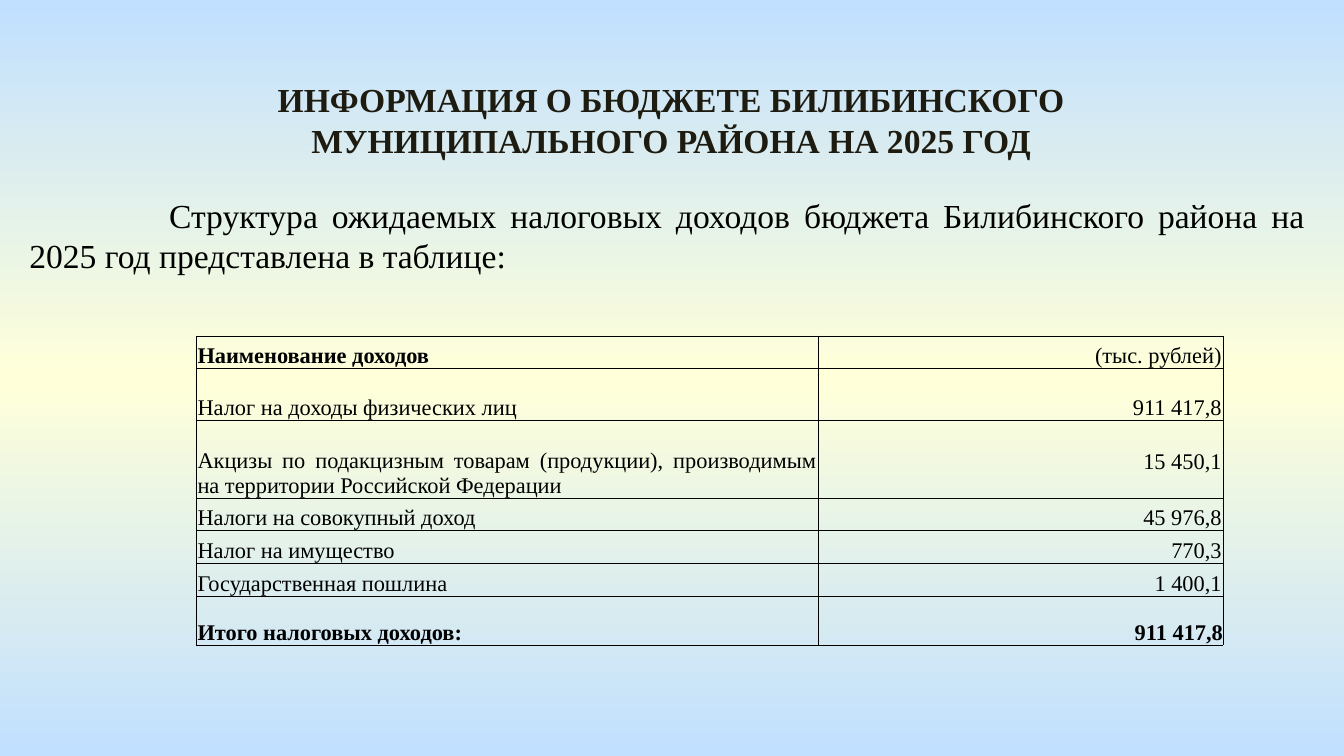
import copy

import pptx
import pptx.dml.color
import pptx.enum.text
import pptx.oxml
import pptx.oxml.ns
import pptx.util

Inches = pptx.util.Inches
ALIGN = pptx.enum.text.PP_ALIGN
ANCHOR = pptx.enum.text.MSO_ANCHOR

TITLE = "ИНФОРМАЦИЯ О БЮДЖЕТЕ БИЛИБИНСКОГО МУНИЦИПАЛЬНОГО РАЙОНА НА 2025 ГОД"
INTRODUCTION = (
    "Структура ожидаемых налоговых доходов бюджета Билибинского района "
    "на 2025 год представлена в таблице:"
)
INCOME_ROWS = [
    ("Наименование доходов", "(тыс. рублей)", 0.24),
    ("Налог на доходы физических лиц", "911 417,8", 0.39),
    ("Акцизы по подакцизным товарам (продукции), производимым "
     "на территории Российской Федерации", "15 450,1", 0.58),
    ("Налоги на совокупный доход", "45 976,8", 0.24),
    ("Налог на имущество", "770,3", 0.24),
    ("Государственная пошлина", "1 400,1", 0.25),
    ("Итого налоговых доходов:", "911 417,8", 0.36),
]
COLUMN_WIDTHS = [4.63, 3.01]
EXCISE_ROW = 2
TOTAL_ROW = len(INCOME_ROWS) - 1
BOLD_CELLS = {(0, 0), (TOTAL_ROW, 0), (TOTAL_ROW, 1)}
SLIDE_WIDTH = 10
SLIDE_HEIGHT = SLIDE_WIDTH * 9 / 16

THEME = {
    "font": "Times New Roman",
    "title_color": "1E1C11",
    "text_color": "000000",
    "border_color": "000000",
    "border_width": 0.5,
    "heading_size": 18,
    "table_size": 12,
    "background": [(0, "C1E0FF"), (0.5, "FFFFD9"), (1, "C1E0FF")],
}


def write_text(frame, text, size, color=THEME["text_color"], bold=False,
               align=ALIGN.JUSTIFY, indent=0):
    frame.word_wrap = True
    paragraph = frame.paragraphs[0]
    paragraph.alignment = align
    paragraph.line_spacing = 1.0
    if indent:
        paragraph._p.get_or_add_pPr().set("indent", str(Inches(indent)))
    run = paragraph.add_run()
    run.text = text
    run.font.name = THEME["font"]
    run.font.size = pptx.util.Pt(size)
    run.font.bold = bold
    run.font.color.rgb = pptx.dml.color.RGBColor.from_string(color)


def paint_background(slide):
    fill = slide.background.fill
    fill.gradient()
    fill.gradient_angle = 270
    stop_list = slide._element.find(".//" + pptx.oxml.ns.qn("a:gsLst"))
    stop_list.append(copy.deepcopy(stop_list[0]))
    for stop, (position, color) in zip(fill.gradient_stops, THEME["background"]):
        stop.position = position
        stop.color.rgb = pptx.dml.color.RGBColor.from_string(color)


def draw_borders(cell):
    properties = cell._tc.get_or_add_tcPr()
    width = pptx.util.Pt(THEME["border_width"])
    for side in ("lnL", "lnR", "lnT", "lnB"):
        properties.append(pptx.oxml.parse_xml(
            f'<a:{side} {pptx.oxml.ns.nsdecls("a")} w="{width}"><a:solidFill>'
            f'<a:srgbClr val="{THEME["border_color"]}"/></a:solidFill></a:{side}>'
        ))


def add_title(slide):
    title = slide.shapes.title
    title.left, title.top = Inches(1.13), Inches(0.54)
    title.width, title.height = Inches(7.73), Inches(0.71)
    title.text_frame.vertical_anchor = ANCHOR.TOP
    title.text_frame.auto_size = pptx.enum.text.MSO_AUTO_SIZE.NONE
    write_text(title.text_frame, TITLE, THEME["heading_size"],
               color=THEME["title_color"], bold=True, align=ALIGN.CENTER)


def add_introduction(slide):
    box = slide.shapes.add_textbox(
        Inches(0.12), Inches(1.4), Inches(9.69), Inches(0.71))
    write_text(box.text_frame, INTRODUCTION, THEME["heading_size"], indent=1.04)


def add_income_table(slide):
    heights = [row[2] for row in INCOME_ROWS]
    table = slide.shapes.add_table(
        len(INCOME_ROWS), len(COLUMN_WIDTHS), Inches(1.46), Inches(2.5),
        Inches(sum(COLUMN_WIDTHS)), Inches(sum(heights))).table
    table.first_row = False
    table.horz_banding = False
    for column, width in zip(table.columns, COLUMN_WIDTHS):
        column.width = Inches(width)
    for row_index, (name, amount, height) in enumerate(INCOME_ROWS):
        table.rows[row_index].height = Inches(height)
        for column_index, text in enumerate((name, amount)):
            position = (row_index, column_index)
            cell = table.cell(*position)
            inset = 0 if position == (TOTAL_ROW, 1) else 0.01
            cell.margin_left = cell.margin_right = cell.margin_top = Inches(inset)
            cell.margin_bottom = Inches(0.18 if position == (EXCISE_ROW, 1) else 0)
            cell.vertical_anchor = ANCHOR.BOTTOM
            draw_borders(cell)
            cell.fill.background()
            write_text(cell.text_frame, text, THEME["table_size"],
                       bold=position in BOLD_CELLS,
                       align=ALIGN.RIGHT if column_index else ALIGN.JUSTIFY)


def main():
    presentation = pptx.Presentation()
    presentation.slide_width = Inches(SLIDE_WIDTH)
    presentation.slide_height = Inches(SLIDE_HEIGHT)
    slide = presentation.slides.add_slide(presentation.slide_layouts[5])
    paint_background(slide)
    add_title(slide)
    add_introduction(slide)
    add_income_table(slide)
    presentation.save("out.pptx")


if __name__ == "__main__":
    main()
